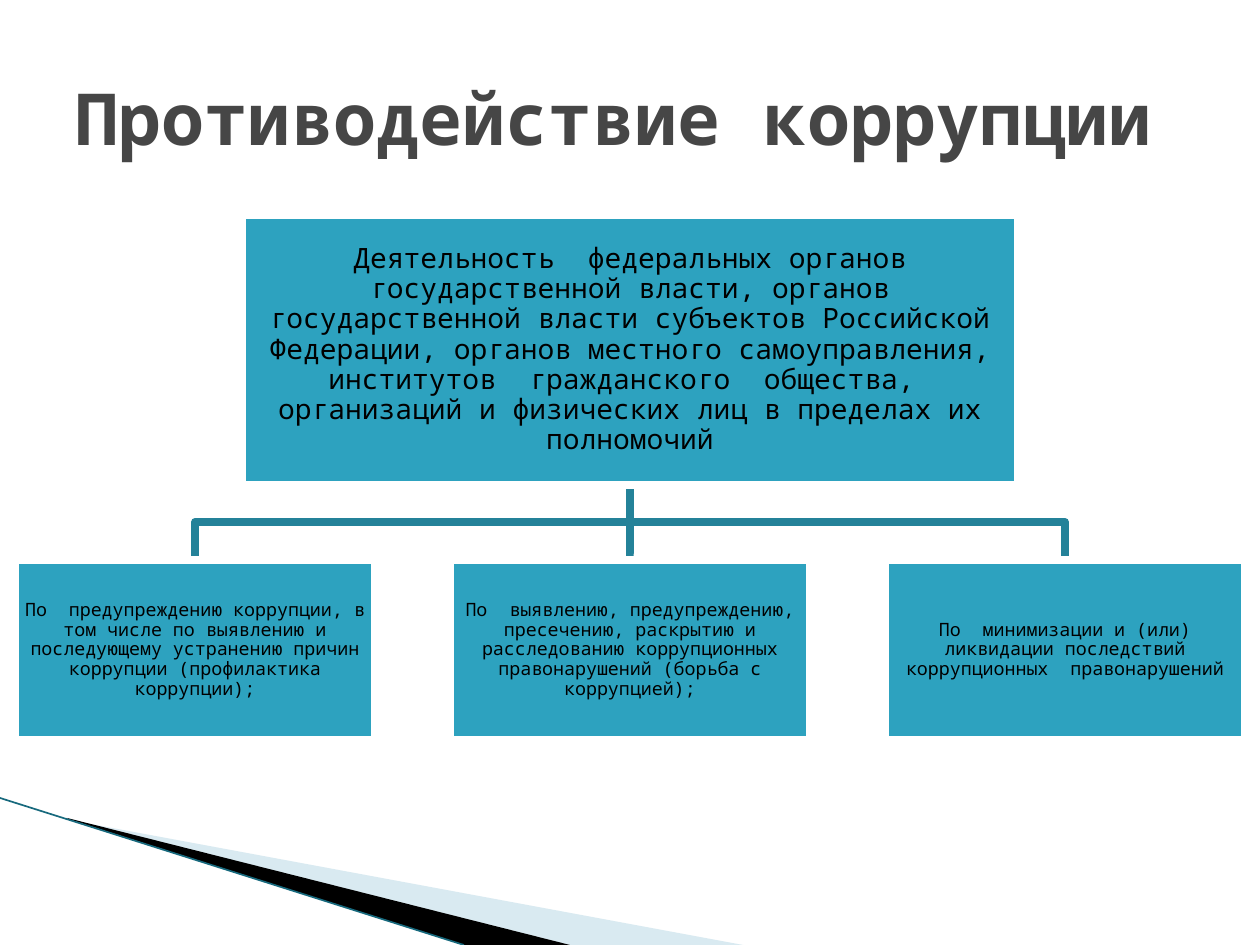
from lxml import etree
from pptx import Presentation
from pptx.dml.color import RGBColor
from pptx.enum.shapes import MSO_CONNECTOR as Connector, MSO_SHAPE as Shape
from pptx.enum.text import MSO_ANCHOR as Anchor, PP_ALIGN as Align
from pptx.oxml.ns import qn
from pptx.util import Pt

PX = 914400 / 126
FONT = "Noto Sans Mono"
TEAL, DARK_TEAL = "2DA2BF", "248299"


def px(*lengths):
    return [round(length * PX) for length in lengths]


def paint(color_format, color):
    color_format.rgb = RGBColor.from_string(color)


presentation = Presentation()
presentation.slide_width, presentation.slide_height = px(1260, 945)
slide = presentation.slides.add_slide(presentation.slide_layouts[6])
shapes = slide.shapes

# Corner decoration
wedges = [
    ("A0CBDC", 40, [(69, 820), (743, 945), (570, 945), (69, 819)]),
    ("000000", 100, [(67, 818), (570, 945), (464, 945), (68, 819)]),
]
for color, opacity, points in wedges:
    builder = shapes.build_freeform(*points[0], scale=PX)
    builder.add_line_segments(points[1:], close=True)
    wedge = builder.convert_to_shape()
    wedge.shadow.inherit = False
    wedge.line.fill.background()
    wedge.fill.solid()
    paint(wedge.fill.fore_color, color)
    if opacity < 100:
        color_element = wedge.fill._xPr.find(".//" + qn("a:srgbClr"))
        etree.SubElement(color_element, qn("a:alpha"), val=str(opacity * 1000))

edge = shapes.add_connector(Connector.STRAIGHT, *px(0, 798, 464, 945))
trunk = shapes.add_connector(Connector.STRAIGHT, *px(630, 485, 630, 560))
for connector, color, width in [(edge, "17697D", 0.95), (trunk, DARK_TEAL, 4.33)]:
    paint(connector.line.color, color)
    connector.line.width = Pt(width)
    etree.SubElement(connector._element.spPr, qn("a:effectLst"))

# Branches from the main box to the outer boxes
for branch_x in (195, 1065):
    builder = shapes.build_freeform(630, 485, scale=PX)
    builder.add_line_segments([(630, 522), (branch_x, 522), (branch_x, 560)], close=False)
    branch = builder.convert_to_shape()
    branch.shadow.inherit = False
    branch.fill.background()
    paint(branch.line.color, DARK_TEAL)
    branch.line.width = Pt(4.33)

# Title
title = shapes.add_textbox(*px(63, 38, 1134, 157))
title.text_frame.word_wrap = True
title.text_frame.vertical_anchor = Anchor.MIDDLE
run = title.text_frame.paragraphs[0].add_run()
run.text = "Противодействие коррупции"
run.font.name, run.font.size, run.font.bold = FONT, Pt(41), True
paint(run.font.color, "464646")

# Main box and the three boxes below it
main_text = (
    "Деятельность  федеральных органов государственной власти, органов "
    "государственной власти субъектов Российской Федерации, органов местного "
    "самоуправления, институтов  гражданского  общества,  организаций "
    "и физических лиц в пределах их полномочий"
)
goals = [
    "По  предупреждению коррупции, в том числе по выявлению и последующему "
    "устранению причин коррупции (профилактика коррупции);",
    "По  выявлению, предупреждению, пресечению, раскрытию и расследованию "
    "коррупционных правонарушений (борьба с коррупцией);",
    "По  минимизации и (или) ликвидации последствий коррупционных  правонарушений",
]
box_specs = [((242, 215, 776, 270), 16, main_text)]
for column, goal in enumerate(goals):
    box_specs.append(((15 + 435 * column, 560, 360, 180), 10.5, goal))

boxes = []
for bounds, size, text in box_specs:
    box = shapes.add_shape(Shape.RECTANGLE, *px(*bounds))
    box.shadow.inherit = False
    box.fill.solid()
    paint(box.fill.fore_color, TEAL)
    paint(box.line.color, "FFFFFF")
    box.line.width = Pt(4.33)
    frame = box.text_frame
    frame.word_wrap = True
    frame.vertical_anchor = Anchor.MIDDLE
    frame.margin_left, frame.margin_top, frame.margin_right, frame.margin_bottom = px(1, 1, 1, 1)
    paragraph = frame.paragraphs[0]
    paragraph.alignment = Align.CENTER
    paragraph.line_spacing = 0.9
    run = paragraph.add_run()
    run.text = text
    run.font.name, run.font.size = FONT, Pt(size)
    paint(run.font.color, "000000")
    boxes.append(box)

trunk.begin_connect(boxes[0], 2)
trunk.end_connect(boxes[2], 0)

presentation.save("out.pptx")
